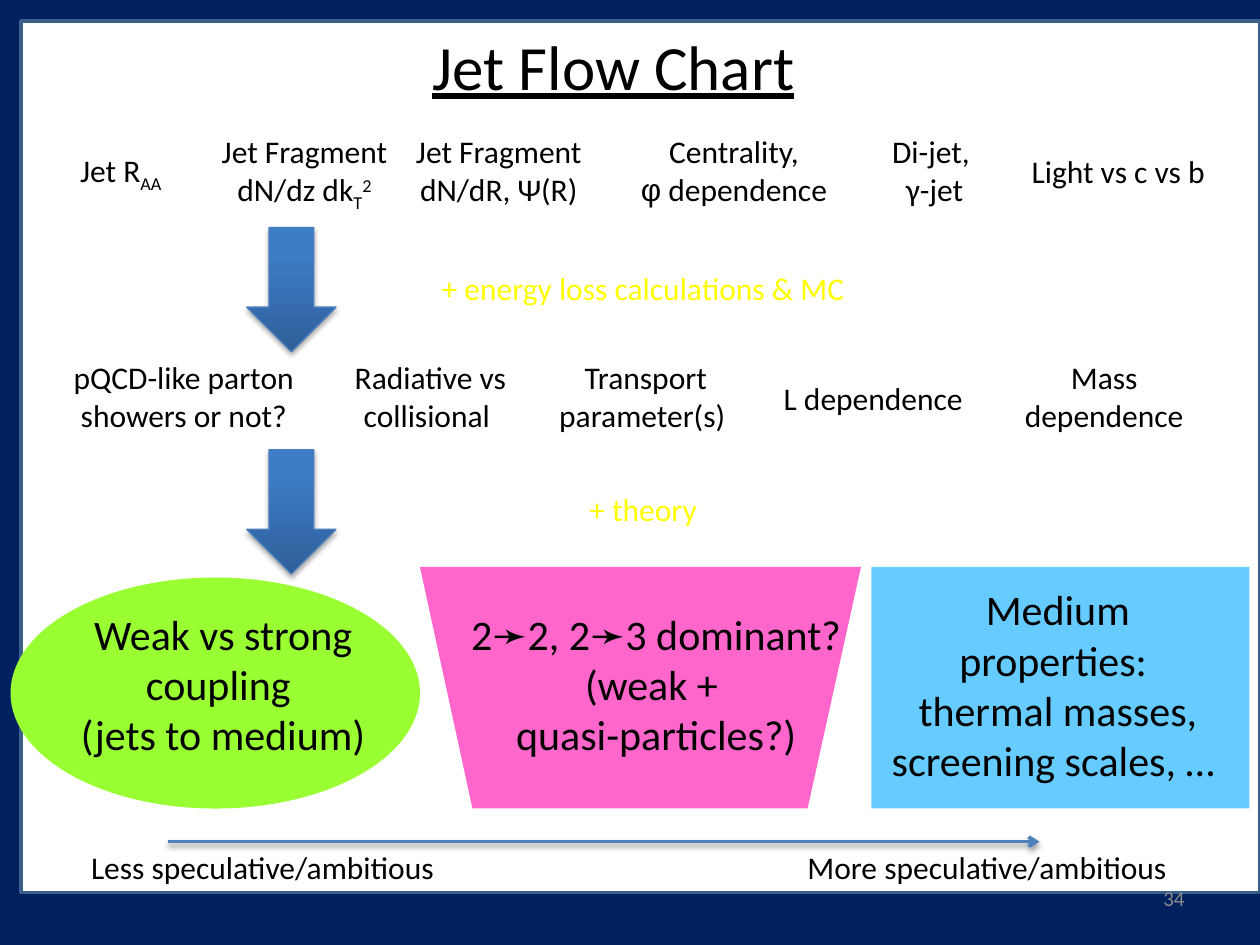
from lxml.etree import SubElement
from pptx import Presentation
from pptx.dml.color import RGBColor
from pptx.enum.shapes import MSO_CONNECTOR, MSO_SHAPE
from pptx.enum.text import MSO_ANCHOR, PP_ALIGN
from pptx.oxml.ns import qn
from pptx.util import Pt

COLORS = {
    "navy": "002060", "white": "FFFFFF", "frame": "3A5F8C", "black": "000000",
    "yellow": "FFFF00", "gray": "8C8C8C", "pink": "FF66CC", "sky": "66CCFF",
    "green": "99FF33", "arrow": "4F81BD", "arrow edge": "4B7EBC",
    "arrow dark": "2F5F99", "arrow light": "3D7CC7",
}
BASELINES = {"sub": "-25000", "super": "30000"}

OBSERVABLES = [
    (27, 83, 84, 1, [[("Jet R", ""), ("AA", "sub")]]),
    (111, 72, 126, 2, ["Jet Fragment",
                       [("dN/dz dk", ""), ("T", "sub"), ("2", "super")]]),
    (225, 72, 120, 2, ["Jet Fragment", "dN/dR, Ψ(R)"]),
    (351, 72, 141, 2, ["Centrality, ", [("φ", "greek"), (" dependence ", "")]]),
    (471, 72, 126, 2, ["Di-jet, ", "γ-jet"]),
    (576, 83.5, 126, 1, ["Light vs c vs b"]),
]
MECHANISMS = [
    (27, 201, 156, 2, ["pQCD-like parton", "showers or not?"]),
    (192, 201, 108, 2, ["Radiative vs collisional "]),
    (306, 201, 126, 2, ["Transport parameter(s) "]),
    (438, 213, 126, 1, ["L dependence "]),
    (570, 201, 126, 2, ["Mass  dependence "]),
]
CONCLUSIONS = [
    (33, 344, 189, 3, ["Weak vs strong coupling ", "(jets to medium)"]),
    (252, 344, 246, 3, ["2➛2, 2➛3 dominant?", "(weak + ", "quasi-particles?)"]),
    (501, 330, 207, 4, ["Medium properties: ",
                        "thermal masses, screening scales, …  "]),
]
SCALE_LABELS = [
    (30, 481, 240, 1, ["Less speculative/ambitious"]),
    (444, 481, 240, 1, ["More speculative/ambitious"]),
]
STEPS = [
    (130, 150, ["+ energy loss calculations & MC"]),
    (257, 276.5, ["+ theory"]),
]


def rgb(name):
    return RGBColor.from_string(COLORS[name])


def add_run(paragraph, text, style, size, color):
    run = paragraph.add_run()
    run.text = text
    run.font.name = "Arial" if style == "greek" else "Calibri"
    run.font.size = Pt(size)
    run.font.color.rgb = rgb(color)
    if style in BASELINES:
        run.font._element.set("baseline", BASELINES[style])
    return run


def add_label(slide, left, top, width, line_count, paragraphs,
              size=18, color="black", align=PP_ALIGN.CENTER):
    height = line_count * size * 1.2 + 7.2
    shape = slide.shapes.add_textbox(Pt(left), Pt(top), Pt(width), Pt(height))
    frame = shape.text_frame
    frame.word_wrap = True
    for index, content in enumerate(paragraphs):
        paragraph = frame.paragraphs[0] if index == 0 else frame.add_paragraph()
        paragraph.alignment = align
        runs = [(content, "")] if isinstance(content, str) else content
        for text, style in runs:
            add_run(paragraph, text, style, size, color)
    return frame


def paint(shape, fill):
    shape.shadow.inherit = False
    shape.fill.solid()
    shape.fill.fore_color.rgb = rgb(fill)
    shape.line.fill.background()
    return shape


def add_block(slide, kind, left, top, width, height, fill):
    shape = slide.shapes.add_shape(kind, Pt(left), Pt(top), Pt(width), Pt(height))
    return paint(shape, fill)


def add_funnel(slide):
    builder = slide.shapes.build_freeform(Pt(240), Pt(324), scale=1.0)
    corners = [(270, 462), (461.5, 462), (492, 324)]
    builder.add_line_segments([(Pt(x), Pt(y)) for x, y in corners], close=True)
    paint(builder.convert_to_shape(), "pink")


def add_shadow(shape, distance, opacity):
    properties = shape._element.spPr
    effects = properties.find(qn("a:effectLst"))
    if effects is None:
        effects = SubElement(properties, qn("a:effectLst"))
    shadow = SubElement(effects, qn("a:outerShdw"), blurRad=str(Pt(3.1)),
                        dist=str(Pt(distance)), dir="5400000", rotWithShape="0")
    color = SubElement(shadow, qn("a:srgbClr"), val=COLORS["black"])
    SubElement(color, qn("a:alpha"), val=str(opacity * 1000))


def add_down_arrow(slide, top):
    shape = slide.shapes.add_shape(
        MSO_SHAPE.DOWN_ARROW, Pt(141), Pt(top), Pt(51), Pt(71))
    shape.fill.gradient()
    shape.fill.gradient_angle = 90
    stops = shape.fill.gradient_stops
    for stop, position, color in zip(stops, (0, 0.8), ("arrow dark", "arrow light")):
        stop.position = position
        stop.color.rgb = rgb(color)
    shape.line.color.rgb = rgb("arrow edge")
    shape.line.width = Pt(0.75)
    shape.shadow.inherit = False
    add_shadow(shape, 1.8, 35)


def add_scale_arrow(slide):
    connector = slide.shapes.add_connector(
        MSO_CONNECTOR.STRAIGHT, Pt(96), Pt(481), Pt(594), Pt(481))
    connector.line.color.rgb = rgb("arrow")
    connector.line.width = Pt(2)
    line = connector._element.spPr.find(qn("a:ln"))
    SubElement(line, qn("a:tailEnd"), type="arrow")
    add_shadow(connector, 1.6, 38)


def main():
    presentation = Presentation()
    presentation.slide_width, presentation.slide_height = Pt(720), Pt(540)
    slide = presentation.slides.add_slide(presentation.slide_layouts[6])
    slide.background.fill.solid()
    slide.background.fill.fore_color.rgb = rgb("navy")

    board = add_block(slide, MSO_SHAPE.RECTANGLE, 12, 12, 708, 498, "white")
    board.line.color.rgb = rgb("frame")
    board.line.width = Pt(2)
    number = add_label(slide, 516, 500.5, 168, 1, ["34"], 12, "gray", PP_ALIGN.RIGHT)
    number.vertical_anchor = MSO_ANCHOR.MIDDLE
    number.margin_top = Pt(7.2)

    add_funnel(slide)
    add_block(slide, MSO_SHAPE.RECTANGLE, 498, 324, 216, 138, "sky")
    add_block(slide, MSO_SHAPE.OVAL, 6, 330, 234, 132, "green")
    for label in OBSERVABLES + MECHANISMS:
        add_label(slide, *label)
    for label in CONCLUSIONS:
        add_label(slide, *label, size=24)

    add_scale_arrow(slide)
    for label in SCALE_LABELS:
        add_label(slide, *label)
    for arrow_top, label_top, text in STEPS:
        add_down_arrow(slide, arrow_top)
        add_label(slide, 201, label_top, 333, 1, text, color="yellow")

    title = add_label(slide, 240, 12, 246, 1, ["Jet Flow Chart"], 36,
                      align=PP_ALIGN.LEFT)
    title.word_wrap = False
    title.paragraphs[0].runs[0].font.underline = True
    presentation.save("out.pptx")


if __name__ == "__main__":
    main()
